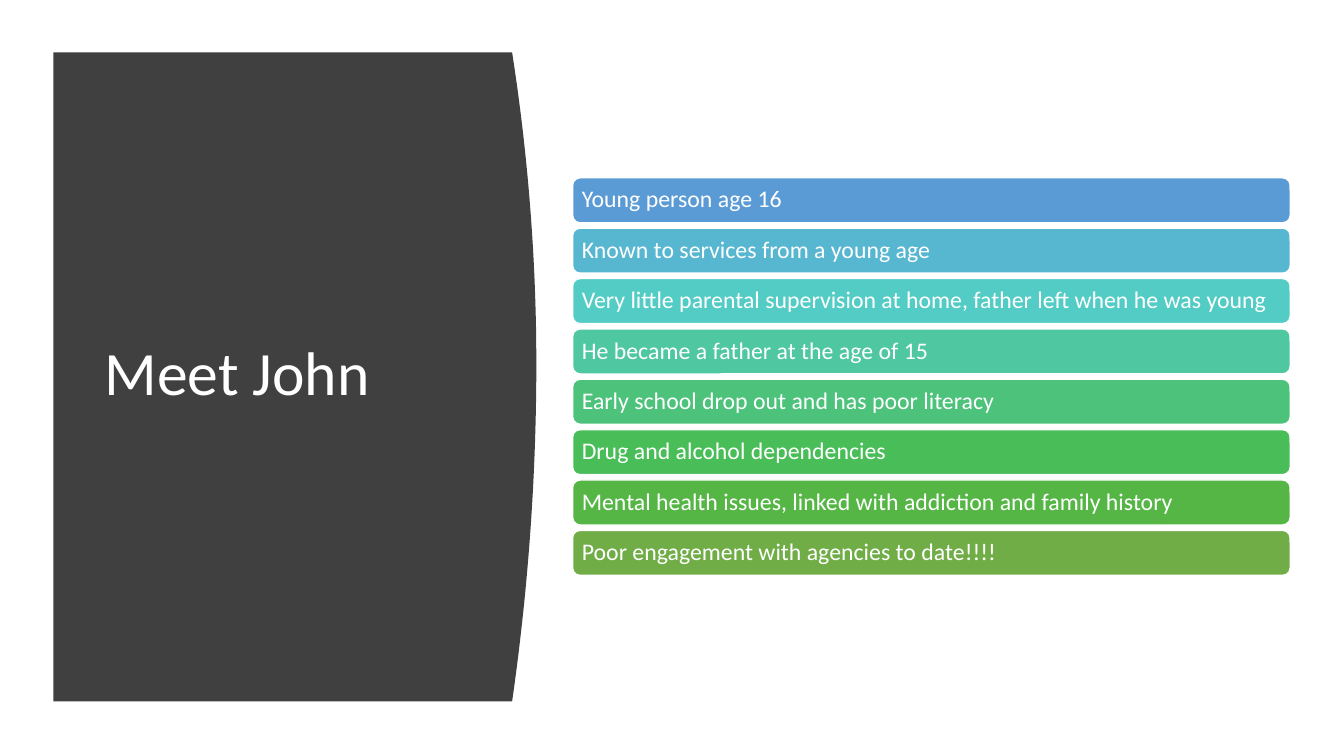
from pptx import Presentation
from pptx.dml.color import RGBColor
from pptx.enum.shapes import MSO_SHAPE
from pptx.enum.text import MSO_ANCHOR, PP_ALIGN
from pptx.util import Pt

ROUND = MSO_SHAPE.ROUNDED_RECTANGLE
MIDDLE = MSO_ANCHOR.MIDDLE
LEFT = PP_ALIGN.LEFT
FONT = "Calibri"
COLORS = {"panel": "404040", "white": "FFFFFF", "blue": "5B9BD5",
          "sky": "57B7D1", "aqua": "53CCC5", "teal": "4FC7A0",
          "mint": "4CC27B", "green": "48BD58", "leaf": "55B646",
          "olive": "70AD47"}
FACTS = [
    ("blue", "Young person age 16"),
    ("sky", "Known to services from a young age"),
    ("aqua", "Very little parental supervision at home, father left when he was young"),
    ("teal", "He became a father at the age of 15"),
    ("mint", "Early school drop out and has poor literacy"),
    ("green", "Drug and alcohol dependencies"),
    ("leaf", "Mental health issues, linked with addiction and family history"),
    ("olive", "Poor engagement with agencies to date!!!!"),
]


def color(name):
    """Return the named colour."""
    return RGBColor.from_string(COLORS[name])


def write(shape, text, size, side, edge):
    """Write one white line of text, centred in height, into a shape."""
    frame = shape.text_frame
    frame.word_wrap = True
    frame.vertical_anchor = MIDDLE
    frame.margin_left = frame.margin_right = Pt(side)
    frame.margin_top = frame.margin_bottom = Pt(edge)
    para = frame.paragraphs[0]
    para.alignment = LEFT
    para.line_spacing = 0.9
    run = para.add_run()
    run.text = text
    run.font.name = FONT
    run.font.size = Pt(size)
    run.font.color.rgb = color("white")


def add_panel(slide, left, top, width, height, title):
    """Draw the dark panel with a bulging right side, and its title."""
    bulge, crest, steps = 17.3, 0.48, 40
    curve = []
    for step in range(steps + 1):
        part = step / steps
        reach = crest if part < crest else 1 - crest
        drop = bulge * ((part - crest) / reach) ** 2
        curve.append((Pt(left + width - drop), Pt(top + height * part)))
    outline = slide.shapes.build_freeform(Pt(left), Pt(top))
    outline.add_line_segments(curve + [(Pt(left), Pt(top + height))], close=True)
    panel = outline.convert_to_shape()
    panel.shadow.inherit = False
    panel.fill.solid()
    panel.fill.fore_color.rgb = color("panel")
    panel.line.fill.background()
    box = slide.shapes.add_textbox(Pt(left + 29.5), Pt(top + 42.5), Pt(269.3), Pt(377.3))
    write(box, title, 44, 7.2, 3.6)


def add_facts(slide, left, top, width, height, facts):
    """Stack one coloured bar per fact, evenly down the box."""
    gap = 3.8
    pitch = (height + gap) / len(facts)
    for row, (name, text) in enumerate(facts):
        bar = slide.shapes.add_shape(ROUND, Pt(left), Pt(top + row * pitch),
                                     Pt(width), Pt(pitch - gap))
        bar.shadow.inherit = False
        bar.fill.solid()
        bar.fill.fore_color.rgb = color(name)
        bar.line.color.rgb = color("white")
        bar.line.width = Pt(1)
        write(bar, text, 17, 5, 3)


def main():
    """Build the slide and save it."""
    deck = Presentation()
    deck.slide_width, deck.slide_height = Pt(960), Pt(540)
    slide = deck.slides.add_slide(deck.slide_layouts[6])
    add_panel(slide, 38.2, 37.4, 344.9, 463.7, "Meet John")
    add_facts(slide, 409, 127, 512.6, 284, FACTS)
    deck.save("out.pptx")


if __name__ == "__main__":
    main()
